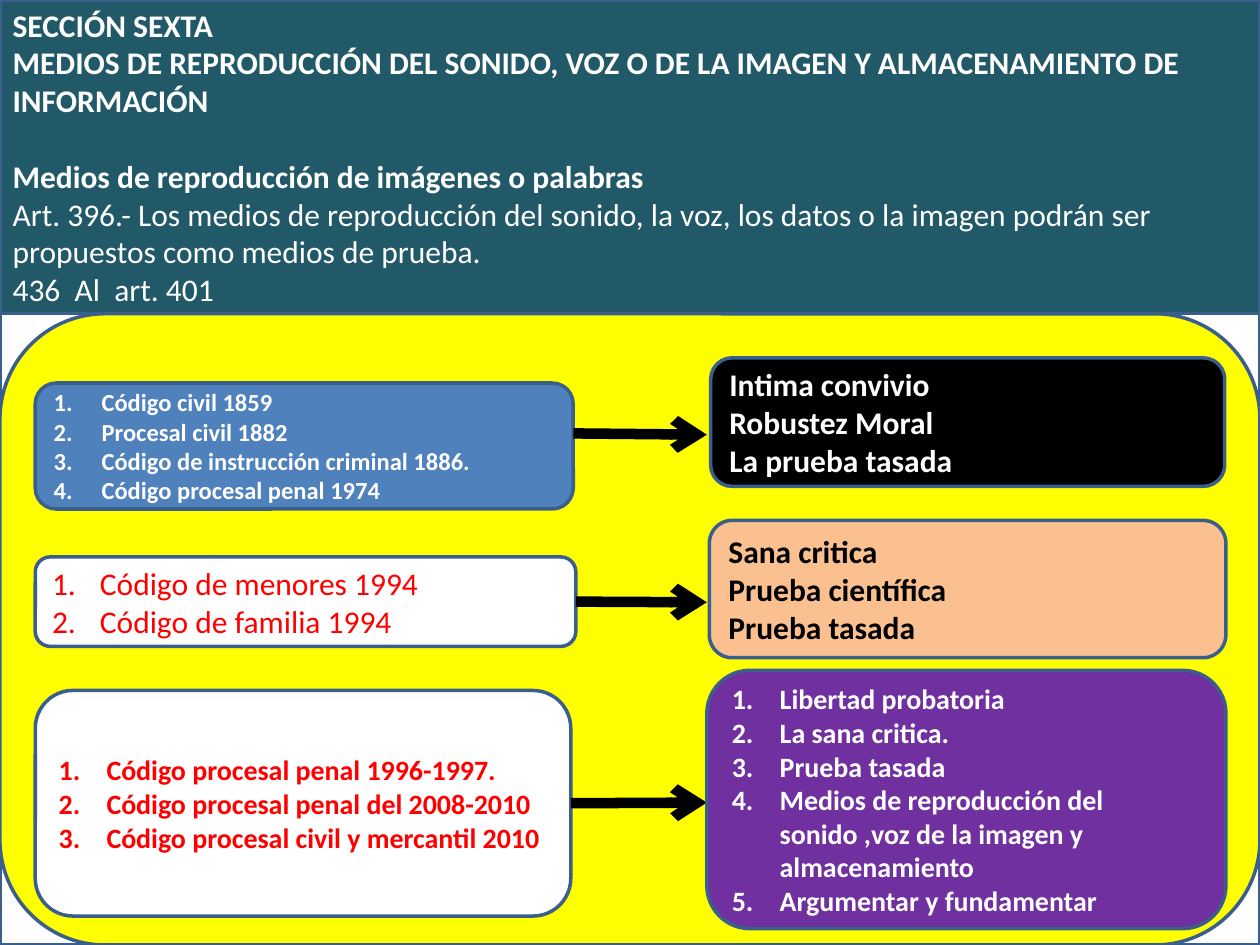
"""Build the slide on reproduction media as evidence and the codes behind it."""
from dataclasses import dataclass

from lxml import etree
from pptx import Presentation
from pptx.dml.color import RGBColor
from pptx.enum.shapes import MSO_CONNECTOR, MSO_SHAPE
from pptx.enum.text import MSO_ANCHOR, MSO_AUTO_SIZE, PP_ALIGN
from pptx.oxml.ns import qn
from pptx.shapes.autoshape import Shape
from pptx.slide import Slide
from pptx.util import Inches, Pt

RECTANGLE = MSO_SHAPE.RECTANGLE
ROUNDED = MSO_SHAPE.ROUNDED_RECTANGLE
STRAIGHT = MSO_CONNECTOR.STRAIGHT
MIDDLE = MSO_ANCHOR.MIDDLE
NO_AUTOFIT = MSO_AUTO_SIZE.NONE
LEFT = PP_ALIGN.LEFT
TITLE_ONLY = 5
RIGHT_SIDE = 3
NUMBER_INDENT = Inches(0.38)


@dataclass(frozen=True)
class Theme:
    """Colours, type sizes and line widths of the slide."""

    font: str = "Calibri"
    white: str = "FFFFFF"
    black: str = "000000"
    red: str = "FF0000"
    teal: str = "215968"
    yellow: str = "FFFF00"
    blue: str = "4F81BD"
    peach: str = "FAC090"
    purple: str = "7030A0"
    outline: str = "3A5F8C"
    large: int = 18
    medium: int = 16
    small: int = 14
    outline_width: int = 2
    arrow_width: int = 6


THEME = Theme()


@dataclass(frozen=True)
class Panel:
    """A filled box with its lines of text."""

    area: tuple[float, float, float, float]
    fill: str
    lines: tuple[str, ...] = ()
    color: str = THEME.white
    size: int = THEME.large
    bold: bool = True
    numbered: bool = False


@dataclass(frozen=True)
class Arrow:
    """An arrow from a code panel, joined to it where it leaves mid-side."""

    start: tuple[float, float]
    end: tuple[float, float]
    joined: bool = True


FRAME = Panel((0, 0, 10, 7.5), THEME.white)
BACKDROP = Panel((0, 2.49, 10, 5.01), THEME.yellow)
HEADER = Panel((0, 0, 10, 2.49), THEME.teal, (
    "SECCIÓN SEXTA",
    "MEDIOS DE REPRODUCCIÓN DEL SONIDO, VOZ O DE LA IMAGEN Y ALMACENAMIENTO DE INFORMACIÓN",
    "Medios de reproducción de imágenes o palabras",
    "Art. 396.- Los medios de reproducción del sonido, la voz, los datos o la imagen "
    "podrán ser propuestos como medios de prueba.",
    "436  Al  art. 401",
))
HEADER_SUBHEADING = 2

CODES = (
    Panel((0.28, 3.04, 4.27, 1), THEME.blue, (
        "Código civil 1859",
        "Procesal civil 1882",
        "Código de instrucción criminal 1886.",
        "Código procesal penal 1974",
    ), size=THEME.small, numbered=True),
    Panel((0.28, 4.42, 4.29, 0.71), THEME.white, (
        "Código de menores 1994",
        "Código de familia 1994",
    ), THEME.red, bold=False, numbered=True),
    Panel((0.28, 5.48, 4.25, 1.79), THEME.white, (
        "Código procesal penal 1996-1997.",
        "Código procesal penal del 2008-2010",
        "Código procesal civil y mercantil 2010",
    ), THEME.red, THEME.medium, numbered=True),
)
ARROWS = (
    Arrow((4.55, 3.44), (5.61, 3.45), joined=False),
    Arrow((4.57, 4.78), (5.61, 4.78)),
    Arrow((4.53, 6.37), (5.61, 6.37)),
)
SYSTEMS = (
    Panel((5.64, 2.84, 4.08, 1.02), THEME.black, (
        "Intima convivio",
        "Robustez Moral",
        "La prueba tasada",
    )),
    Panel((5.63, 4.13, 4.1, 1.09), THEME.peach, (
        "Sana critica",
        "Prueba científica",
        "Prueba tasada",
    ), THEME.black),
    Panel((5.61, 5.32, 4.12, 2.05), THEME.purple, (
        "Libertad probatoria",
        "La sana critica.",
        "Prueba tasada",
        "Medios de reproducción del sonido ,voz de la imagen y almacenamiento",
        "Argumentar y fundamentar",
    ), size=THEME.medium, numbered=True),
)


def style_panel(box: Shape, panel: Panel) -> None:
    """Give a box the fill, outline and text of its panel."""
    box.fill.solid()
    box.fill.fore_color.rgb = RGBColor.from_string(panel.fill)
    box.line.color.rgb = RGBColor.from_string(THEME.outline)
    box.line.width = Pt(THEME.outline_width)
    if not panel.lines:
        return
    frame = box.text_frame
    frame.text = "\n".join(panel.lines)
    frame.word_wrap = True
    frame.auto_size = NO_AUTOFIT
    frame.vertical_anchor = MIDDLE
    for para in frame.paragraphs:
        para.alignment = LEFT
        para.font.name = THEME.font
        para.font.size = Pt(panel.size)
        para.font.bold = panel.bold
        para.font.color.rgb = RGBColor.from_string(panel.color)
        if panel.numbered:
            properties = para._p.get_or_add_pPr()
            properties.set("marL", str(NUMBER_INDENT))
            properties.set("indent", str(-NUMBER_INDENT))
            number = etree.Element(qn("a:buAutoNum"), type="arabicPeriod")
            properties.find(qn("a:defRPr")).addprevious(number)


def add_panel(page: Slide, panel: Panel, outline: MSO_SHAPE = ROUNDED) -> Shape:
    """Add one panel to the page."""
    box = page.shapes.add_shape(outline, *map(Inches, panel.area))
    box.shadow.inherit = False
    style_panel(box, panel)
    return box


def add_header(page: Slide) -> None:
    """Turn the title placeholder into the rounded header."""
    title = page.shapes.title
    title.left, title.top, title.width, title.height = map(Inches, HEADER.area)
    geometry = etree.SubElement(title._element.spPr, qn("a:prstGeom"), prst="roundRect")
    etree.SubElement(geometry, qn("a:avLst"))
    style_panel(title, HEADER)
    paragraphs = title.text_frame.paragraphs
    paragraphs[HEADER_SUBHEADING].space_before = Pt(THEME.large * 1.2)
    for para in paragraphs[HEADER_SUBHEADING + 1:]:
        para.font.bold = False
    page.shapes._spTree.append(title._element)


def add_arrow(page: Slide, arrow: Arrow, source: Shape) -> None:
    """Add one arrow leaving the source box."""
    connector = page.shapes.add_connector(STRAIGHT, *map(Inches, arrow.start + arrow.end))
    if arrow.joined:
        connector.begin_connect(source, RIGHT_SIDE)
    connector.line.color.rgb = RGBColor.from_string(THEME.black)
    connector.line.width = Pt(THEME.arrow_width)
    etree.SubElement(connector.line._get_or_add_ln(), qn("a:tailEnd"), type="arrow")
    etree.SubElement(connector._element.spPr, qn("a:effectLst"))


def main() -> None:
    """Build and save the deck."""
    deck = Presentation()
    deck.slide_width, deck.slide_height = Inches(10), Inches(7.5)
    page = deck.slides.add_slide(deck.slide_layouts[TITLE_ONLY])
    add_panel(page, FRAME, RECTANGLE)
    add_header(page)
    add_panel(page, BACKDROP)
    boxes = [add_panel(page, panel) for panel in CODES]
    for arrow, box in zip(ARROWS, boxes):
        add_arrow(page, arrow, box)
    for panel in SYSTEMS:
        add_panel(page, panel)
    deck.save("out.pptx")


if __name__ == "__main__":
    main()
